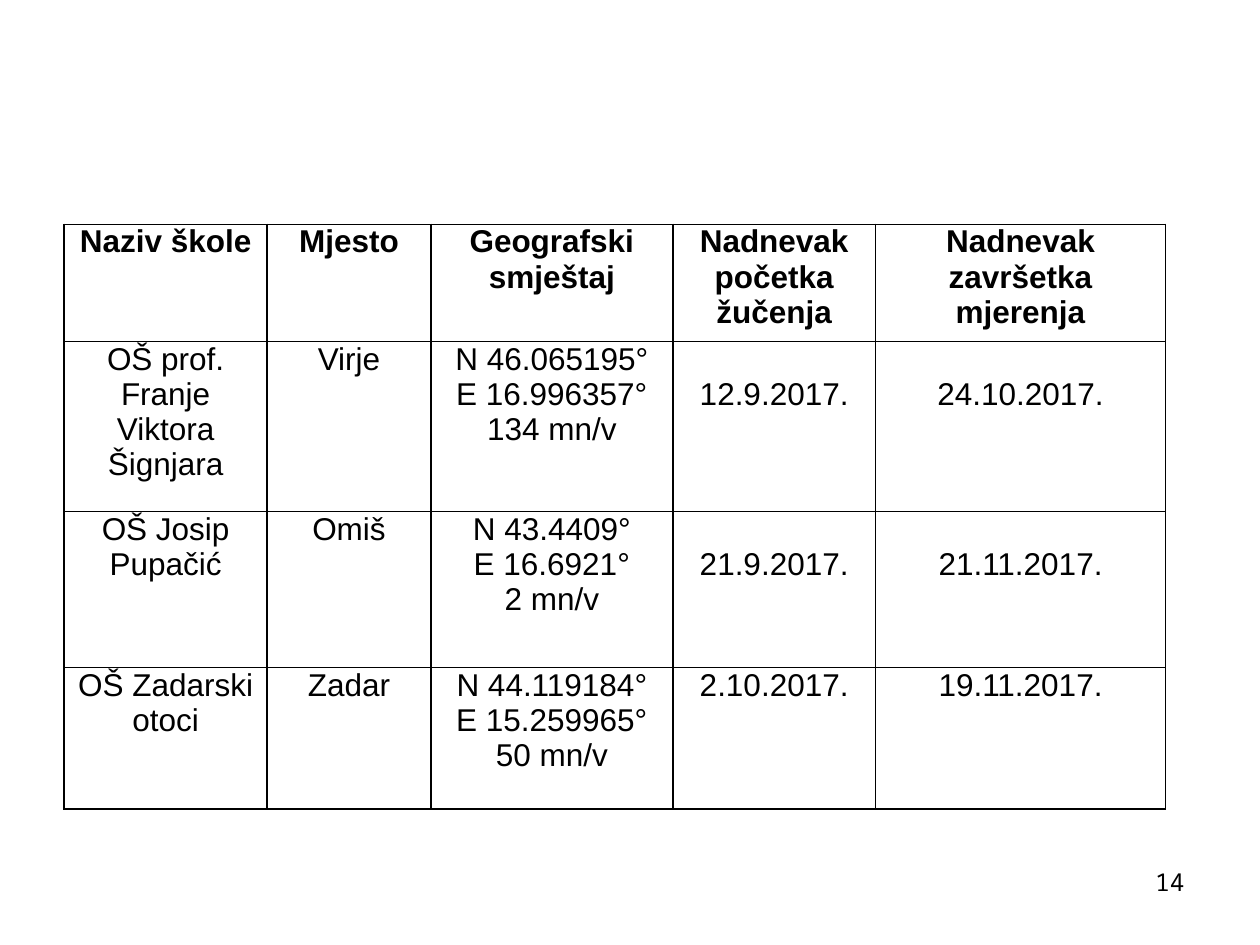
from lxml.etree import SubElement
from pptx import Presentation
from pptx.dml.color import RGBColor
from pptx.enum.text import PP_ALIGN
from pptx.oxml.ns import qn
from pptx.util import Inches, Pt

BLACK = "000000"
COLUMN_WIDTHS = [1.61, 1.3, 1.92, 1.61, 2.3]
ROW_HEIGHTS = [0.93, 1.35, 1.24, 1.12]
TEXT_LINE = 0.28  # height of one 18 pt line

HEADINGS = ["Naziv škole", "Mjesto", "Geografski smještaj",
            "Nadnevak\npočetka žučenja", "Nadnevak\nzavršetka mjerenja"]
SCHOOLS = [
    ["OŠ prof. Franje Viktora Šignjara", "Virje",
     "N 46.065195°\nE 16.996357°\n134 mn/v", "12.9.2017.", "24.10.2017."],
    ["OŠ Josip Pupačić", "Omiš",
     "N 43.4409°\nE 16.6921°\n2 mn/v", "21.9.2017.", "21.11.2017."],
    ["OŠ Zadarski otoci", "Zadar",
     "N 44.119184°\nE 15.259965°\n50 mn/v", "2.10.2017.", "19.11.2017."],
]
LOWERED_DATE_ROWS = (1, 2)
DATE_COLUMNS = (3, 4)


def color(hex_string):
    return RGBColor.from_string(hex_string)


def write(frame, text, align, font_name, size, bold=False):
    frame.text = text
    for para in frame.paragraphs:
        para.alignment = align
        para.font.name = font_name
        para.font.size = Pt(size)
        para.font.bold = bold
        para.font.color.rgb = color(BLACK)


def add_borders(cell, hex_string, width):
    properties = cell._tc.get_or_add_tcPr()
    for side in ("lnL", "lnR", "lnT", "lnB"):
        line = SubElement(properties, qn(f"a:{side}"), w=str(Pt(width)))
        fill = SubElement(line, qn("a:solidFill"))
        SubElement(fill, qn("a:srgbClr"), val=hex_string)


def add_school_table(page, left, top):
    rows = [HEADINGS] + SCHOOLS
    frame = page.shapes.add_table(
        len(rows), len(HEADINGS), Inches(left), Inches(top),
        Inches(sum(COLUMN_WIDTHS)), Inches(sum(ROW_HEIGHTS)))
    table = frame.table
    table.horz_banding = False
    for column, width in zip(table.columns, COLUMN_WIDTHS):
        column.width = Inches(width)
    for row, height in zip(table.rows, ROW_HEIGHTS):
        row.height = Inches(height)

    for row_index, texts in enumerate(rows):
        for column_index, text in enumerate(texts):
            cell = table.cell(row_index, column_index)
            lowered = (row_index in LOWERED_DATE_ROWS
                       and column_index in DATE_COLUMNS)
            cell.margin_left = cell.margin_right = Inches(0.07)
            cell.margin_top = Inches(TEXT_LINE if lowered else 0)
            cell.margin_bottom = 0
            add_borders(cell, BLACK, 1)
            cell.fill.background()
            write(cell.text_frame, text, PP_ALIGN.CENTER, "Arial", 18,
                  bold=row_index == 0)


def add_page_number(page, number, left, top, width, height):
    box = page.shapes.add_textbox(
        Inches(left), Inches(top), Inches(width), Inches(height))
    box.text_frame.word_wrap = True
    write(box.text_frame, str(number), PP_ALIGN.RIGHT, "Noto Sans Mono", 14)


def main():
    deck = Presentation()
    deck.slide_width, deck.slide_height = Inches(10), Inches(7.5)
    page = deck.slides.add_slide(deck.slide_layouts[6])
    # Measuring sites
    add_school_table(page, 0.51, 1.78)
    # Footer
    add_page_number(page, 14, 7.17, 6.83, 2.33, 0.52)
    deck.save("out.pptx")


if __name__ == "__main__":
    main()
